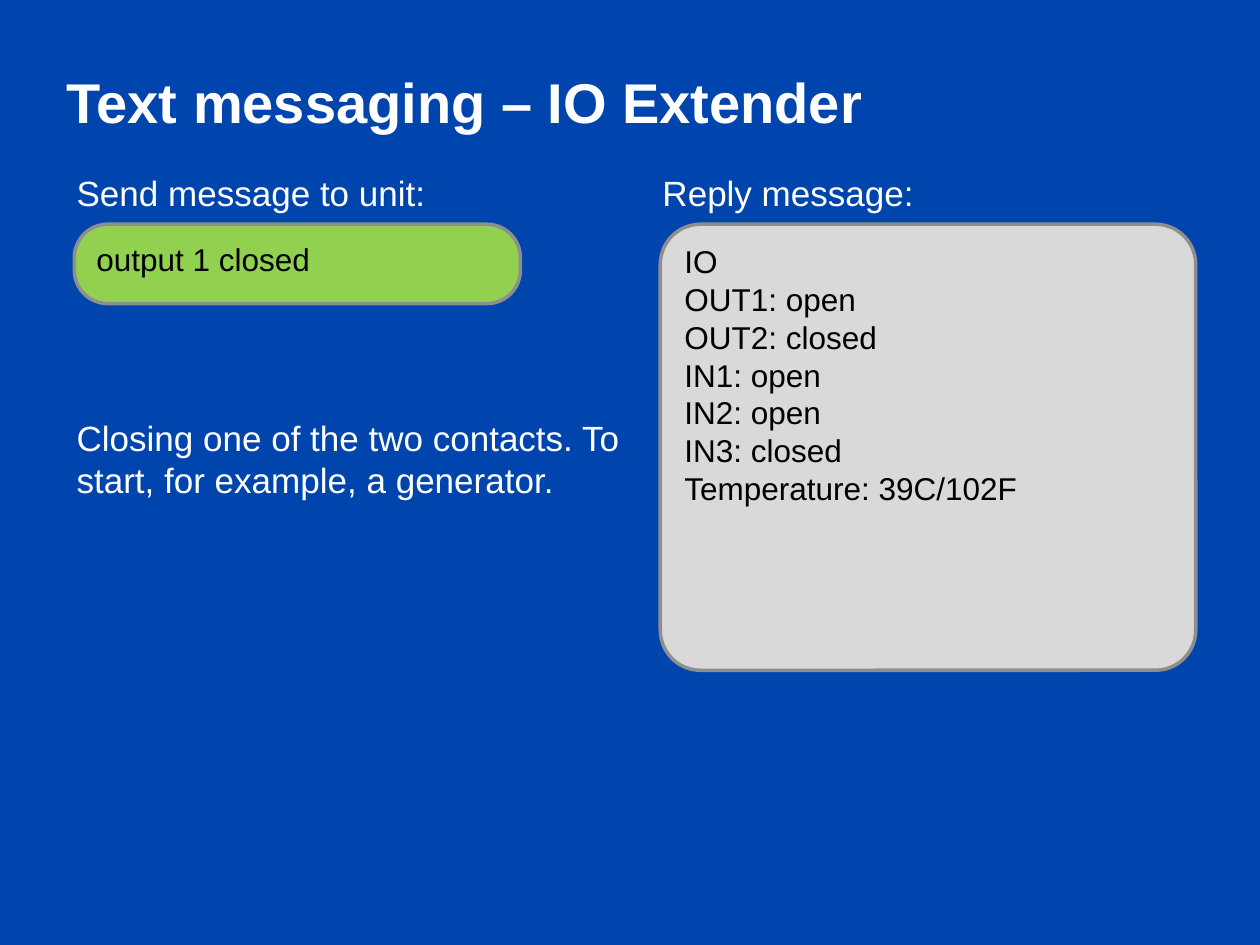
import pptx
import pptx.util
import pptx.dml.color
import pptx.enum.shapes
import pptx.enum.text

THEME = {
    "font": "Arial", "bg": "0045AD", "light": "FFFFFF", "dark": "000000",
    "border": "8E8E8E", "sent": "92D050", "reply": "D9D9D9",
    "title": 32, "body": 20, "message": 18, "border_width": 2,
}

prs = pptx.Presentation()
prs.slide_width = pptx.util.Inches(10)
prs.slide_height = pptx.util.Inches(7.5)
s = prs.slides.add_slide(prs.slide_layouts[6])


def rgb(key):
    return pptx.dml.color.RGBColor.from_string(THEME[key])


def write(sp, lines, size, color, anchor="TOP", bold=False):
    tf = sp.text_frame
    tf.word_wrap = True
    tf.vertical_anchor = getattr(pptx.enum.text.MSO_ANCHOR, anchor)
    tf.text = "\n".join(lines)
    for p in tf.paragraphs:
        p.alignment = pptx.enum.text.PP_ALIGN.LEFT
        for r in p.runs:
            r.font.name = THEME["font"]
            r.font.size = pptx.util.Pt(THEME[size])
            r.font.bold = bold
            r.font.color.rgb = rgb(color)
    return tf


s.background.fill.solid()
s.background.fill.fore_color.rgb = rgb("bg")
W, H = prs.slide_width / 100, prs.slide_height / 100

title = s.shapes.add_textbox(int(4.3 * W), int(3.73 * H), int(93.3 * W), int(13.87 * H))
write(title, ["Text messaging – IO Extender"], "title", "light", "MIDDLE", True)

columns = [
    (5.1, ["Send message to unit:",
           "Closing one of the two contacts. To start, for example, a generator."]),
    (51.6, ["Reply message:"]),
]
for left, lines in columns:
    sp = s.shapes.add_textbox(int(left * W), int(17.47 * H), int(45.3 * W), int(70.4 * H))
    tf = write(sp, lines, "body", "light")
    for p in tf.paragraphs[1:]:
        p.space_before = pptx.util.Pt(116)

messages = [
    (5.9, 35.4, 8.4, 0.42, "sent", ["output 1 closed"]),
    (52.4, 42.5, 47.2, 0.09, "reply",
     ["IO", "OUT1: open", "OUT2: closed", "IN1: open", "IN2: open", "IN3: closed",
      "Temperature: 39C/102F"]),
]
for left, width, height, corner, fill, lines in messages:
    sp = s.shapes.add_shape(pptx.enum.shapes.MSO_SHAPE.ROUNDED_RECTANGLE,
                            int(left * W), int(23.73 * H), int(width * W), int(height * H))
    sp.adjustments[0] = corner
    sp.shadow.inherit = False
    sp.fill.solid()
    sp.fill.fore_color.rgb = rgb(fill)
    sp.line.color.rgb = rgb("border")
    sp.line.width = pptx.util.Pt(THEME["border_width"])
    write(sp, lines, "message", "dark")

prs.save("out.pptx")
